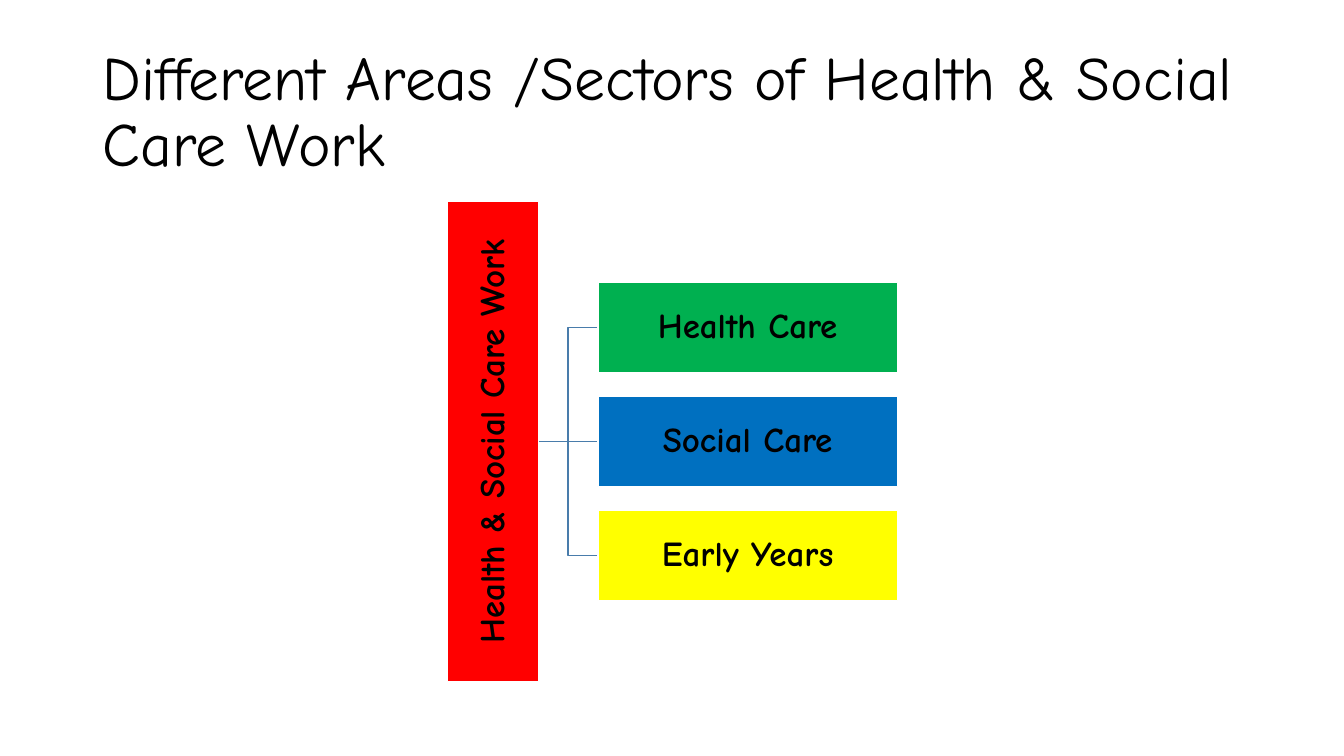
from pptx import Presentation
from pptx.dml.color import RGBColor
from pptx.enum.shapes import MSO_CONNECTOR as CONN, MSO_SHAPE as SHAPE
from pptx.enum.text import MSO_ANCHOR as ANCHOR, PP_ALIGN as ALIGN
from pptx.oxml.ns import qn
from pptx.util import Inches, Pt
from lxml.etree import SubElement

FONT = "Comic Neue"
LINK_COLOR = "497CAB"
ROOT_RIGHT, AREA_LEFT = 5.34, 5.93
AREA_WIDTH, BOX_HEIGHT = 2.97, 0.9
MIDDLE, STEP = 4.38, 1.13
AREAS = [("Health Care", "00B050"), ("Social Care", "0070C0"), ("Early Years", "FFFF00")]


def rgb(value):
    return RGBColor.from_string(value)


def set_line(s, color):
    s.line.color.rgb = rgb(color)
    s.line.width = Pt(1)


def write(s, text, size, bold, align, inset):
    tf = s.text_frame
    frame = {"word_wrap": True, "vertical_anchor": ANCHOR.MIDDLE}
    frame.update({f"margin_{side}": Inches(gap) for side, gap in inset.items()})
    p = tf.paragraphs[0]
    r = p.add_run()
    r.text = text
    r.font.color.rgb = rgb("000000")
    formats = [
        (tf, frame),
        (p, {"alignment": align, "line_spacing": 0.9}),
        (r.font, {"name": FONT, "size": Pt(size), "bold": bold}),
    ]
    for target, values in formats:
        for name, value in values.items():
            setattr(target, name, value)


def add_title(slide, text):
    s = slide.shapes.add_textbox(Inches(0.92), Inches(0.4), Inches(11.5), Inches(1.45))
    write(s, text, 44, False, ALIGN.LEFT, {"left": 0.1, "right": 0.1, "top": 0.05, "bottom": 0.05})


def add_box(slide, text, color, left, middle, width, rotation=0):
    s = slide.shapes.add_shape(
        SHAPE.RECTANGLE, Inches(left), Inches(middle - BOX_HEIGHT / 2),
        Inches(width), Inches(BOX_HEIGHT))
    s.rotation = rotation
    s.shadow.inherit = False
    s.fill.solid()
    s.fill.fore_color.rgb = rgb(color)
    set_line(s, "FFFFFF")
    write(s, text, 25, True, ALIGN.CENTER, dict.fromkeys(("left", "right", "top", "bottom"), 0.02))


def add_straight_link(slide):
    s = slide.shapes.add_connector(
        CONN.STRAIGHT, Inches(ROOT_RIGHT), Inches(MIDDLE), Inches(AREA_LEFT), Inches(MIDDLE))
    set_line(s, LINK_COLOR)
    SubElement(s._element.spPr, qn("a:effectLst"))


def add_elbow_link(slide, end):
    bend = (ROOT_RIGHT + AREA_LEFT) / 2
    points = [(bend, MIDDLE), (bend, end), (AREA_LEFT, end)]
    builder = slide.shapes.build_freeform(Inches(ROOT_RIGHT), Inches(MIDDLE))
    builder.add_line_segments([(Inches(x), Inches(y)) for x, y in points], close=False)
    s = builder.convert_to_shape()
    s.shadow.inherit = False
    s.fill.background()
    set_line(s, LINK_COLOR)


def main():
    prs = Presentation()
    prs.slide_width, prs.slide_height = Inches(13.33), Inches(7.5)
    slide = prs.slides.add_slide(prs.slide_layouts[6])
    add_title(slide, "Different Areas /Sectors of Health & Social Care Work")
    add_elbow_link(slide, MIDDLE + STEP)
    add_straight_link(slide)
    add_elbow_link(slide, MIDDLE - STEP)
    add_box(slide, "Health & Social Care Work", "FF0000", 2.51, MIDDLE, 4.76, 270)
    for i, (area, color) in enumerate(AREAS):
        add_box(slide, area, color, AREA_LEFT, MIDDLE + (i - 1) * STEP, AREA_WIDTH)
    prs.save("out.pptx")


if __name__ == "__main__":
    main()
